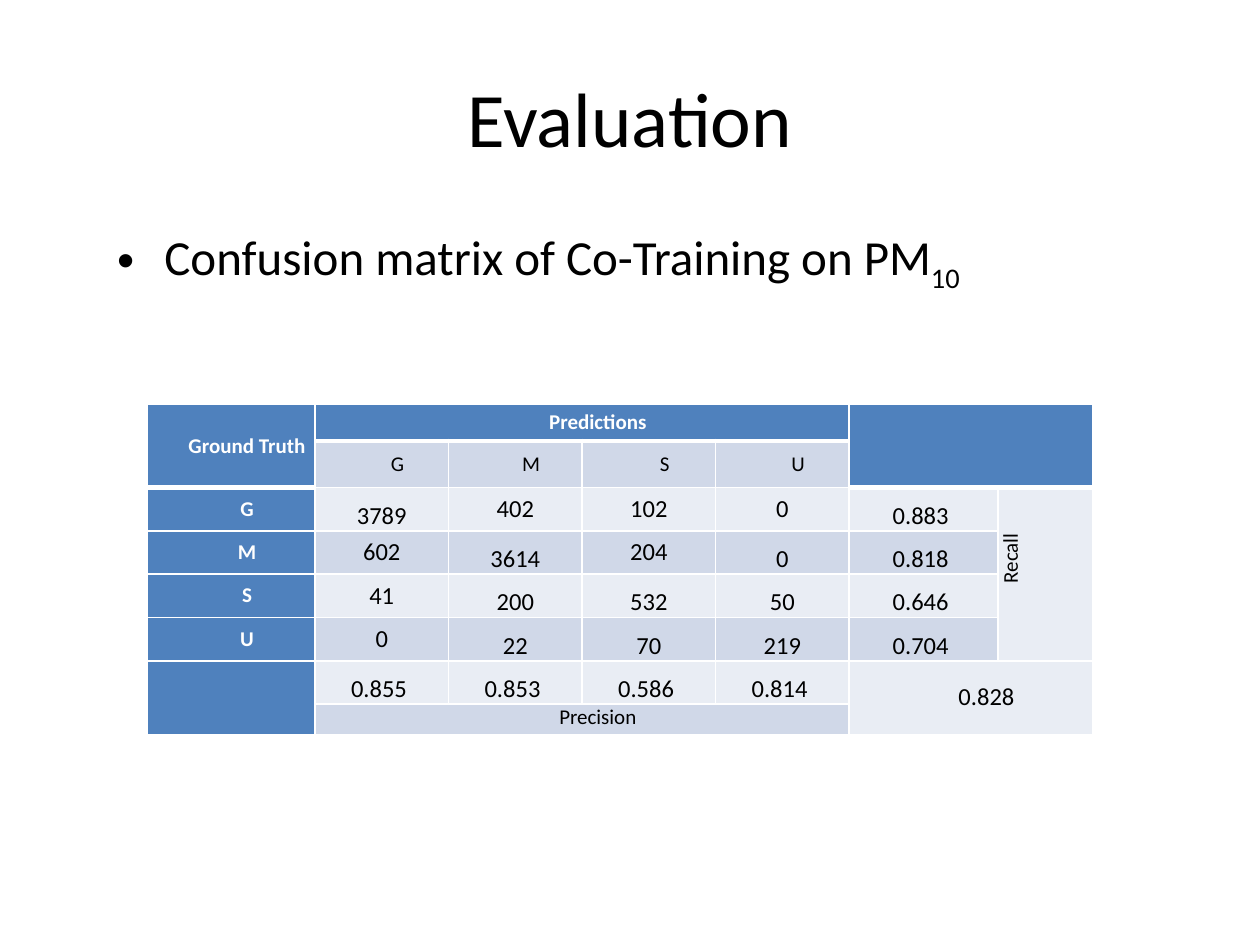
from dataclasses import dataclass
from lxml import etree
from pptx import Presentation
from pptx.dml.color import RGBColor
from pptx.enum.text import MSO_ANCHOR, PP_ALIGN
from pptx.oxml.ns import qn
from pptx.util import Inches, Pt

TOP, MIDDLE, BOTTOM = MSO_ANCHOR.TOP, MSO_ANCHOR.MIDDLE, MSO_ANCHOR.BOTTOM
CENTER = PP_ALIGN.CENTER


@dataclass(frozen=True)
class Theme:
    font: str = "Calibri"
    ink: str = "000000"
    paper: str = "FFFFFF"
    header: str = "4F81BD"
    bands: tuple = ("E9EDF4", "D0D8E8")
    title: int = 44
    body: int = 28
    label: int = 12
    value: int = 14
    rule: int = 1
    heavy_rule: int = 3


THEME = Theme()
TITLE = "Evaluation"
BULLET = [("Confusion matrix of Co-Training on PM", None), ("10", "-25000")]

MATRIX = [
    ["Ground Truth", "Predictions", "", "", "", "", ""],
    ["", "G", "M", "S", "U", "", ""],
    ["G", "3789", "402", "102", "0", "0.883 ", "Recall"],
    ["M", "602", "3614", "204", "0", "0.818 ", ""],
    ["S", "41", "200", "532", "50", "0.646 ", ""],
    ["U", "0", "22", "70", "219", "0.704 ", ""],
    ["", "0.855 ", "0.853 ", "0.586 ", "0.814 ", "0.828", ""],
    ["", "Precision", "", "", "", "", ""],
]
MERGES = [(0, 0, 1, 0), (0, 1, 0, 4), (0, 5, 1, 6), (2, 6, 5, 6),
          (6, 0, 7, 0), (6, 5, 7, 6), (7, 1, 7, 4)]
RAISED_VALUES = {(2, 2), (2, 3), (2, 4), (3, 1), (3, 3), (4, 1), (5, 1)}
OVERALL, RECALL, PRECISION = (6, 5), (2, 6), (7, 1)

TITLE_BOX = (0.5, 0.3, 9, 1.25)
BODY_BOX = (0.83, 1.75, 8.25, 3.83)
MATRIX_BOX = (1.17, 3.21, 7.5, 2.62)
HEADING_HEIGHTS, PRECISION_HEIGHT = [0.29, 0.37], 0.24
VALUE_ROWS = 5
VALUE_HEIGHT = (MATRIX_BOX[3] - sum(HEADING_HEIGHTS) - PRECISION_HEIGHT) / VALUE_ROWS
ROW_HEIGHTS = HEADING_HEIGHTS + [VALUE_HEIGHT] * VALUE_ROWS + [PRECISION_HEIGHT]
COLUMN_WIDTHS = [1.33] + [1.06] * 4 + [1.18, 0.75]
FIRST_LINE = Inches(0.25)


def style_run(run, size, color, bold=False):
    run.font.name = THEME.font
    run.font.size = Pt(size)
    run.font.bold = bold
    run.font.color.rgb = RGBColor.from_string(color)


def place(placeholder, box):
    placeholder.left, placeholder.top, placeholder.width, placeholder.height = map(Inches, box)


def add_borders(cell, heavy_bottom):
    properties = cell._tc.get_or_add_tcPr()
    for side in ("lnL", "lnR", "lnT", "lnB"):
        weight = THEME.heavy_rule if side == "lnB" and heavy_bottom else THEME.rule
        line = etree.SubElement(properties, qn(f"a:{side}"), w=str(Pt(weight)))
        fill = etree.SubElement(line, qn("a:solidFill"))
        etree.SubElement(fill, qn("a:srgbClr"), val=THEME.paper)


def format_cell(cell, row, column, text):
    position = (row, column)
    header = row == 0 or column == 0 or (row == 1 and column > 4)
    is_label = header or row == 1 or position in (RECALL, PRECISION)
    add_borders(cell, row == 0 or (row == 1 and header))
    cell.fill.solid()
    cell.fill.fore_color.rgb = RGBColor.from_string(THEME.header if header else THEME.bands[row % 2])
    cell.margin_left = cell.margin_right = Inches(0.07)
    cell.margin_top = cell.margin_bottom = 0
    if position == PRECISION:
        cell.vertical_anchor = TOP
    elif is_label or position in RAISED_VALUES or position == OVERALL:
        cell.vertical_anchor = MIDDLE
    else:
        cell.vertical_anchor = BOTTOM
    if position == RECALL:
        cell._tc.get_or_add_tcPr().set("vert", "vert270")

    paragraph = cell.text_frame.paragraphs[0]
    if not text:
        paragraph._p.get_or_add_endParaRPr().set("sz", str(THEME.label * 100))
        return
    paragraph.text = text
    paragraph.alignment = CENTER
    if position != RECALL:
        paragraph.space_after = Pt(6)
    if is_label or position == OVERALL:
        paragraph._p.get_or_add_pPr().set("indent", str(FIRST_LINE))
    style_run(paragraph.runs[0], THEME.label if is_label else THEME.value,
              THEME.paper if header else THEME.ink, header)


def add_matrix(slide):
    table = slide.shapes.add_table(len(MATRIX), len(COLUMN_WIDTHS), *map(Inches, MATRIX_BOX)).table
    for column, width in zip(table.columns, COLUMN_WIDTHS):
        column.width = Inches(width)
    for row, height in zip(table.rows, ROW_HEIGHTS):
        row.height = Inches(height)
    for r, labels in enumerate(MATRIX):
        for c, text in enumerate(labels):
            format_cell(table.cell(r, c), r, c, text)
    for top, left, bottom, right in MERGES:
        table.cell(top, left).merge(table.cell(bottom, right))


def main():
    deck = Presentation()
    deck.slide_width, deck.slide_height = Inches(10), Inches(7.5)
    slide = deck.slides.add_slide(deck.slide_layouts[1])

    title = slide.shapes.title
    place(title, TITLE_BOX)
    title.text_frame.text = TITLE
    style_run(title.text_frame.paragraphs[0].runs[0], THEME.title, THEME.ink)

    body = slide.placeholders[1]
    place(body, BODY_BOX)
    for text, baseline in BULLET:
        run = body.text_frame.paragraphs[0].add_run()
        run.text = text
        style_run(run, THEME.body, THEME.ink)
        if baseline:
            run.font._element.set("baseline", baseline)

    add_matrix(slide)
    deck.save("out.pptx")


if __name__ == "__main__":
    main()
